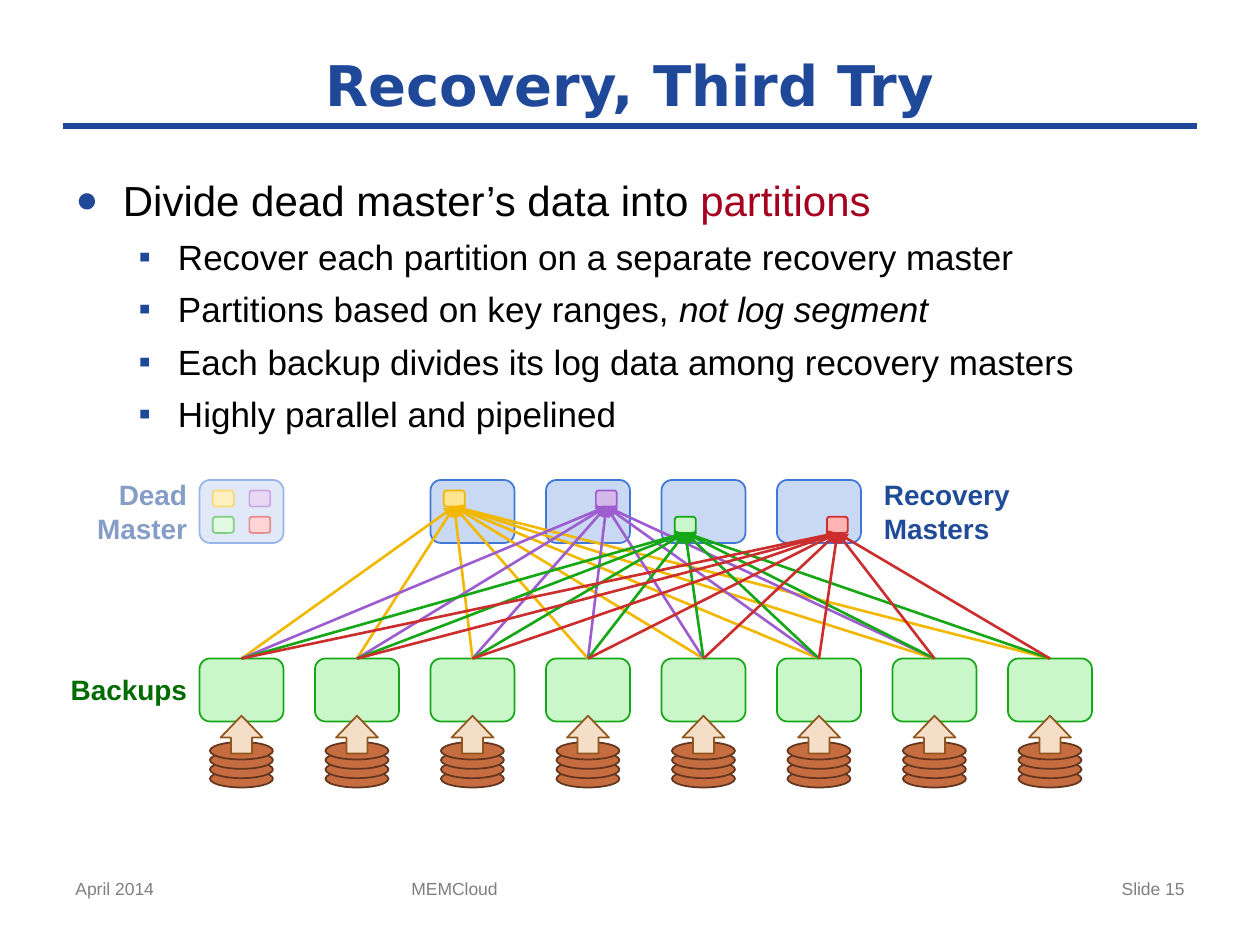
import pptx
import pptx.util
import pptx.dml.color
import pptx.enum.shapes
import pptx.enum.text
import pptx.oxml.ns
import lxml.etree

Pt = pptx.util.Pt
RGB = pptx.dml.color.RGBColor
SHAPE = pptx.enum.shapes.MSO_SHAPE
ALIGN = pptx.enum.text.PP_ALIGN
qn = pptx.oxml.ns.qn

NAVY = RGB(0x1F, 0x48, 0x99)
LABEL_BLUE = RGB(0x20, 0x4B, 0x98)
LABEL_GREEN = RGB(0x00, 0x6C, 0x00)
CRIMSON = RGB(0xA5, 0x00, 0x1E)
BLACK = RGB(0, 0, 0)
WHITE = RGB(0xFF, 0xFF, 0xFF)
GRAY = RGB(0x7F, 0x7F, 0x7F)

# (fill, outline) pairs
BLUE = (RGB(0xC9, 0xD8, 0xF3), RGB(0x41, 0x77, 0xD7))
YELLOW = (RGB(0xFF, 0xE4, 0x8F), RGB(0xF2, 0xB8, 0x00))
PURPLE = (RGB(0xD5, 0xB8, 0xEA), RGB(0x9E, 0x5D, 0xCF))
GREEN = (RGB(0xC9, 0xF7, 0xC9), RGB(0x15, 0xA7, 0x15))
RED = (RGB(0xFF, 0xB3, 0xB3), RGB(0xCC, 0x2E, 0x2E))
COPPER = (RGB(0xC5, 0x6D, 0x41), RGB(0x64, 0x35, 0x1E))
SAND = (RGB(0xF4, 0xDE, 0xC8), RGB(0x90, 0x56, 0x1C))

# Grid of servers
FIRST_X, PITCH = 114, 66
SERVER_W, SERVER_H = 48, 36
MASTER_Y, BACKUP_Y = 274.3, 376.3
BACKUP_COUNT = 8
PART_W, PART_H = 12, 9.2


class SlideBuilder:
    font = "Arial"
    title_font = "DejaVu Sans"

    def __init__(self, slide):
        self.slide = slide

    def place(self, shape, x, y, w, h):
        shape.left, shape.top, shape.width, shape.height = Pt(x), Pt(y), Pt(w), Pt(h)

    def style(self, paragraph, size, color, bold=False, font=None):
        paragraph.font.name = font or self.font
        paragraph.font.size = Pt(size)
        paragraph.font.bold = bold
        paragraph.font.color.rgb = color

    def title(self, text, x, y, w, h):
        heading = self.slide.shapes.title
        self.place(heading, x, y, w, h)
        frame = heading.text_frame
        frame.text = text
        frame.auto_size = pptx.enum.text.MSO_AUTO_SIZE.NONE
        frame.vertical_anchor = pptx.enum.text.MSO_ANCHOR.MIDDLE
        frame.paragraphs[0].alignment = ALIGN.CENTER
        self.style(frame.paragraphs[0], 32, NAVY, True, self.title_font)

    def bullets(self, items, x, y, w, h):
        """Each item is (level, plain text, emphasised text, emphasis colour)."""
        body = self.slide.placeholders[1]
        self.place(body, x, y, w, h)
        frame = body.text_frame
        frame.auto_size = pptx.enum.text.MSO_AUTO_SIZE.NONE
        for number, (level, plain, emphasis, color) in enumerate(items):
            paragraph = frame.add_paragraph() if number else frame.paragraphs[0]
            paragraph.level = level
            self.bullet(paragraph, level)
            paragraph.space_before = Pt(6 if level else 12)
            self.style(paragraph, 20 if level else 24, BLACK)
            paragraph.add_run().text = plain
            if emphasis:
                run = paragraph.add_run()
                run.text = emphasis
                if color:
                    run.font.color.rgb = color
                else:
                    run.font.italic = True

    def bullet(self, paragraph, level):
        margin, hang, percent, mark = ((27, 27, 90, "●"), (58.5, 22.5, 100, "▪"))[level]
        props = paragraph._p.get_or_add_pPr()
        props.set("marL", str(Pt(margin)))
        props.set("indent", str(-Pt(hang)))
        mark_color = lxml.etree.SubElement(props, qn("a:buClr"))
        lxml.etree.SubElement(mark_color, qn("a:srgbClr"), val=str(NAVY))
        lxml.etree.SubElement(props, qn("a:buSzPct"), val=str(percent * 1000))
        lxml.etree.SubElement(props, qn("a:buFont"), typeface=self.font)
        lxml.etree.SubElement(props, qn("a:buChar"), char=mark)

    def text(self, text, x, y, w, h, size, color, bold=False, align=ALIGN.LEFT, wrap=False):
        frame = self.slide.shapes.add_textbox(Pt(x), Pt(y), Pt(w), Pt(h)).text_frame
        frame.word_wrap = wrap
        paragraph = frame.paragraphs[0]
        paragraph.text = text
        paragraph.alignment = align
        self.style(paragraph, size, color, bold)

    def shape(self, kind, x, y, w, h, colors):
        shape = self.slide.shapes.add_shape(kind, Pt(x), Pt(y), Pt(w), Pt(h))
        shape.shadow.inherit = False
        shape.fill.solid()
        shape.fill.fore_color.rgb, outline = colors
        if outline is None:
            shape.line.fill.background()
        else:
            shape.line.color.rgb = outline
            shape.line.width = Pt(1)
        return shape

    def server(self, column, y, colors):
        self.shape(SHAPE.ROUNDED_RECTANGLE, column_x(column), y, SERVER_W, SERVER_H, colors)

    def partition(self, column, dx, dy, colors):
        self.shape(SHAPE.ROUNDED_RECTANGLE, column_x(column) + dx, MASTER_Y + dy,
                   PART_W, PART_H, colors)

    def backup(self, column):
        x = column_x(column)
        for disk in range(4):
            self.shape(SHAPE.OVAL, x + 6, 440 - 5.33 * disk, 36, 10, COPPER)
        self.server(column, BACKUP_Y, GREEN)
        upload = self.shape(SHAPE.UP_ARROW, x + 12, 409, 24, 21.6, SAND)
        upload.adjustments[1] = 0.58

    def line(self, x1, y1, x2, y2, color, width, arrow=False):
        line = self.slide.shapes.add_connector(
            pptx.enum.shapes.MSO_CONNECTOR.STRAIGHT, Pt(x1), Pt(y1), Pt(x2), Pt(y2))
        line.line.color.rgb = color
        line.line.width = Pt(width)
        props = line._element.spPr
        if arrow:
            lxml.etree.SubElement(props.find(qn("a:ln")), qn("a:tailEnd"), type="triangle")
        lxml.etree.SubElement(props, qn("a:effectLst"))

    def veil(self, x, y, w, h, percent):
        veil = self.shape(SHAPE.RECTANGLE, x, y, w, h, (WHITE, None))
        color = veil._element.spPr.find(qn("a:solidFill"))[0]
        lxml.etree.SubElement(color, qn("a:alpha"), val=str(percent * 1000))


def column_x(column):
    return FIRST_X + PITCH * column


def main():
    deck = pptx.Presentation()
    deck.slide_width, deck.slide_height = Pt(720), Pt(540)
    builder = SlideBuilder(deck.slides.add_slide(deck.slide_layouts[1]))

    # Heading and list
    builder.line(36, 72, 684, 72, NAVY, 4)
    builder.title("Recovery, Third Try", 36, 24, 648, 48)
    builder.bullets([
        (0, "Divide dead master’s data into ", "partitions", CRIMSON),
        (1, "Recover each partition on a separate recovery master", "", None),
        (1, "Partitions based on key ranges, ", "not log segment", None),
        (1, "Each backup divides its log data among recovery masters", "", None),
        (1, "Highly parallel and pipelined", "", None),
    ], 36, 96, 648, 155.5)

    # Footer
    for text, x, w, align in (("April 2014", 36, 168, ALIGN.LEFT),
                              ("MEMCloud", 228, 270, ALIGN.LEFT),
                              ("Slide 15", 516, 168, ALIGN.RIGHT)):
        builder.text(text, x, 498, w, 31, 10, GRAY, align=align, wrap=True)

    # Backups with their disks
    for column in range(BACKUP_COUNT):
        builder.backup(column)

    # Dead master and recovery masters: column, offset, colours, senders
    partitions = [(2, 7.6, 6, YELLOW, 8), (3, 28.5, 6, PURPLE, 7),
                  (4, 7.6, 21, GREEN, 8), (5, 28.5, 21, RED, 8)]
    builder.server(0, MASTER_Y, BLUE)
    for column, dx, dy, colors, _ in partitions:
        builder.partition(0, dx, dy, colors)
        builder.server(column, MASTER_Y, BLUE)
        builder.partition(column, dx, dy, colors)

    # Log data flowing from backups to partitions
    for column, dx, dy, (_, color), senders in partitions:
        target_x = column_x(column) + dx + PART_W / 2
        for sender in range(senders):
            builder.line(column_x(sender) + SERVER_W / 2, BACKUP_Y,
                         target_x, MASTER_Y + dy + PART_H, color, 1.5, arrow=True)

    # Labels, and the veil that fades the dead master
    builder.text("Recovery\vMasters", 498, 269.3, 87, 46, 16, LABEL_BLUE, True)
    builder.text("Backups", 32.5, 381, 81.5, 26.6, 16, LABEL_GREEN, True, ALIGN.RIGHT)
    builder.text("Dead\vMaster", 47.5, 269.3, 66.5, 46, 16, LABEL_BLUE, True, ALIGN.RIGHT)
    builder.veil(47.5, 262, 126.7, 60, 46)

    deck.save("out.pptx")


if __name__ == "__main__":
    main()
